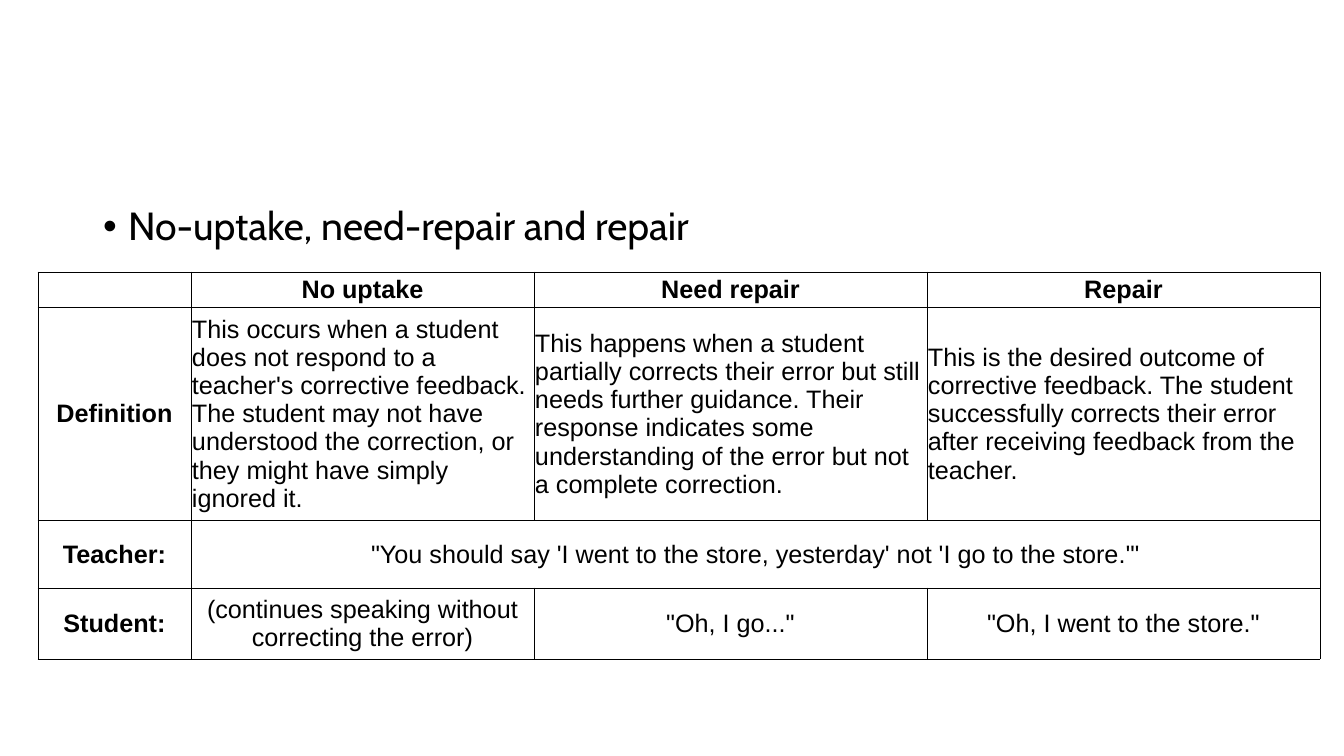
import pptx
import pptx.util
import pptx.dml.color
import pptx.enum.text
import pptx.oxml
from lxml import etree

# Content
POINT = "No-uptake, need-repair and repair"
ROWS = [
    ["", "No uptake", "Need repair", "Repair"],
    ["Definition",
     "This occurs when a student does not respond to a teacher's corrective feedback. "
     "The student may not have understood the correction, or they might have simply ignored it.",
     "This happens when a student partially corrects their error but still needs further guidance. "
     "Their response indicates some understanding of the error but not a complete correction.",
     "This is the desired outcome of corrective feedback. "
     "The student successfully corrects their error after receiving feedback from the teacher."],
    ["Teacher:", "\"You should say 'I went to the store, yesterday' not 'I go to the store.'\"", "", ""],
    ["Student:", "(continues speaking without correcting the error)",
     '"Oh, I go..."', '"Oh, I went to the store."'],
]
DEF_ROW, TALK_ROW = 1, 2

# Sizes in px
SLIDE = (1344, 756)
BODY = (93, 202, 1159, 70)
ORIGIN = (38, 272)
COLS = [153, 343, 393, 393]
HEIGHTS = [35, 213, 68, 71]
INDENT = 25

THEME = {
    "ink": pptx.dml.color.RGBColor(0, 0, 0),
    "body": ("Cabin", 28),
    "cell": ("Arial", 18),
    "line": 0.5,
}
ALIGN = pptx.enum.text.PP_ALIGN
ANCHOR = pptx.enum.text.MSO_ANCHOR


def px(n):
    return pptx.util.Emu(round(n * 914400 / 100.8))


def write(frame, text, font, bold=False, align=ALIGN.LEFT, space=1.0, bullet=None):
    frame.word_wrap = True
    para = frame.paragraphs[0]
    para.alignment = align
    para.line_spacing = space
    para.space_before = pptx.util.Pt(0)
    if bullet:
        props = para._p.get_or_add_pPr()
        props.set("marL", str(px(INDENT)))
        props.set("indent", str(-px(INDENT)))
        for tag, key, val in (("a:buFont", "typeface", "Arial"), ("a:buChar", "char", bullet)):
            etree.SubElement(props, pptx.oxml.ns.qn(tag)).set(key, val)
    para.font.name, size = font
    para.font.size = pptx.util.Pt(size)
    if text:
        run = para.add_run()
        run.text = text
        run.font.name = font[0]
        run.font.size = pptx.util.Pt(size)
        run.font.bold = bold
        run.font.color.rgb = THEME["ink"]


def border(cell):
    props = cell._tc.get_or_add_tcPr()
    for side in "LRTB":
        line = etree.SubElement(props, pptx.oxml.ns.qn("a:ln" + side))
        line.set("w", str(pptx.util.Pt(THEME["line"])))
        fill = etree.SubElement(line, pptx.oxml.ns.qn("a:solidFill"))
        etree.SubElement(fill, pptx.oxml.ns.qn("a:srgbClr")).set("val", str(THEME["ink"]))


# Slide
deck = pptx.Presentation()
deck.slide_width, deck.slide_height = map(px, SLIDE)
slide = deck.slides.add_slide(deck.slide_layouts[1])
title = slide.shapes.title._element
title.getparent().remove(title)

# Bullet point
body = slide.placeholders[1]
body.left, body.top, body.width, body.height = map(px, BODY)
body.text_frame.auto_size = pptx.enum.text.MSO_AUTO_SIZE.NONE
body.text_frame.vertical_anchor = ANCHOR.TOP
write(body.text_frame, POINT, THEME["body"], space=0.9, bullet="•")

# Table
table = slide.shapes.add_table(len(ROWS), len(COLS), *map(px, (*ORIGIN, sum(COLS), sum(HEIGHTS)))).table
table.first_row = table.horz_banding = False
for col, width in zip(table.columns, COLS):
    col.width = px(width)
for row, height in zip(table.rows, HEIGHTS):
    row.height = px(height)
table.cell(TALK_ROW, 1).merge(table.cell(TALK_ROW, len(COLS) - 1))

for r, texts in enumerate(ROWS):
    for c, text in enumerate(texts):
        cell = table.cell(r, c)
        cell.margin_left = cell.margin_right = cell.margin_top = px(1)
        cell.margin_bottom = 0
        cell.vertical_anchor = ANCHOR.MIDDLE
        border(cell)
        cell.fill.background()
        prose = r == DEF_ROW and c > 0
        write(cell.text_frame, text, THEME["cell"], bold=r == 0 or c == 0,
              align=ALIGN.LEFT if prose else ALIGN.CENTER)

deck.save("out.pptx")
